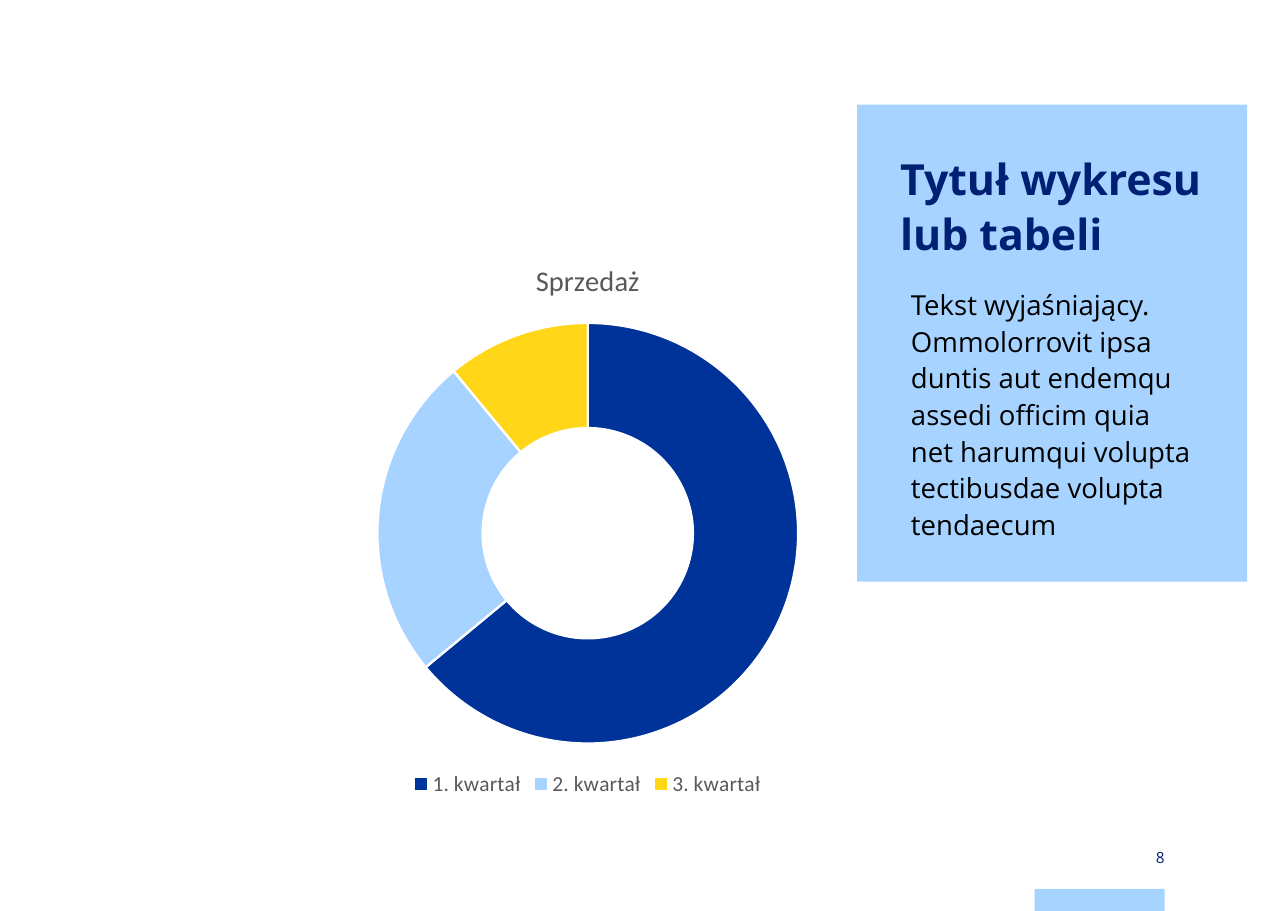
from dataclasses import dataclass

from pptx import Presentation
from pptx.chart.data import CategoryChartData
from pptx.dml.color import RGBColor
from pptx.enum.chart import XL_CHART_TYPE, XL_LEGEND_POSITION
from pptx.enum.shapes import MSO_SHAPE
from pptx.enum.text import MSO_ANCHOR, PP_ALIGN
from pptx.slide import Slide
from pptx.text.text import Font
from pptx.util import Inches, Pt

COLORS = {
    "navy": "002073",
    "blue": "003399",
    "sky": "A6D3FF",
    "yellow": "FFD618",
    "gray": "595959",
    "black": "000000",
    "white": "FFFFFF",
}


@dataclass(frozen=True)
class Box:
    left: float
    top: float
    width: float
    height: float

    def lengths(self) -> list[Inches]:
        return [Inches(v) for v in (self.left, self.top, self.width, self.height)]


@dataclass(frozen=True)
class Label:
    box: Box
    text: str
    size: float
    color: str
    bold: bool = False
    line_spacing: float | None = None
    insets: tuple[float, float] = (0, 0)  # horizontal, vertical
    align: PP_ALIGN = PP_ALIGN.LEFT
    anchor: MSO_ANCHOR = MSO_ANCHOR.TOP


@dataclass(frozen=True)
class Quarter:
    name: str
    share: int
    color: str


PANELS = [
    Box(9.39, 8.07, 1.18, 0.2),  # footer mark
    Box(7.78, 0.95, 3.54, 4.33),  # explanation panel
]
LABELS = [
    Label(Box(8.17, 1.35, 2.76, 1.18), "Tytuł wykresu lub tabeli", 28, "navy",
          bold=True, line_spacing=36),
    Label(Box(8.17, 2.53, 2.76, 2.76),
          "Tekst wyjaśniający. Ommolorrovit ipsa duntis aut endemqu assedi "
          "officim quia net harumqui volupta tectibusdae volupta tendaecum",
          18, "black", line_spacing=24, insets=(0.1, 0.05)),
    Label(Box(9.39, 7.68, 1.18, 0.2), "8", 10, "navy", insets=(0, 0.08),
          align=PP_ALIGN.RIGHT, anchor=MSO_ANCHOR.MIDDLE),
]
SALES_BOX = Box(1.12, 2.16, 8.43, 5.12)
SALES_TITLE = "Sprzedaż"
QUARTERS = [
    Quarter("1. kwartał", 64, "blue"),
    Quarter("2. kwartał", 25, "sky"),
    Quarter("3. kwartał", 11, "yellow"),
]


def rgb(name: str) -> RGBColor:
    return RGBColor.from_string(COLORS[name])


def style_font(font: Font, name: str, size: float, color: str, bold: bool = False) -> None:
    font.name = name
    font.size = Pt(size)
    font.bold = bold
    font.color.rgb = rgb(color)


def draw_panel(slide: Slide, box: Box) -> None:
    panel = slide.shapes.add_shape(MSO_SHAPE.RECTANGLE, *box.lengths())
    panel.shadow.inherit = False
    panel.fill.solid()
    panel.fill.fore_color.rgb = rgb("sky")
    panel.line.fill.background()


def draw_label(slide: Slide, label: Label) -> None:
    frame = slide.shapes.add_textbox(*label.box.lengths()).text_frame
    frame.word_wrap = True
    frame.vertical_anchor = label.anchor
    horizontal, vertical = label.insets
    frame.margin_left = frame.margin_right = Inches(horizontal)
    frame.margin_top = frame.margin_bottom = Inches(vertical)
    paragraph = frame.paragraphs[0]
    paragraph.text = label.text
    paragraph.alignment = label.align
    if label.line_spacing:
        paragraph.line_spacing = Pt(label.line_spacing)
    style_font(paragraph.font, "Open Sans", label.size, label.color, label.bold)


def draw_sales(slide: Slide) -> None:
    sales = CategoryChartData()
    sales.categories = [quarter.name for quarter in QUARTERS]
    sales.add_series(SALES_TITLE, [quarter.share for quarter in QUARTERS])
    chart = slide.shapes.add_chart(
        XL_CHART_TYPE.DOUGHNUT, *SALES_BOX.lengths(), sales).chart
    style_font(chart.font, "Calibri", 10, "black")

    # Title and legend
    chart.has_title = True
    heading = chart.chart_title.text_frame.paragraphs[0]
    heading.text = SALES_TITLE
    style_font(heading.font, "Calibri", 18.6, "gray")
    chart.chart_title.include_in_layout = False
    chart.has_legend = True
    chart.legend.position = XL_LEGEND_POSITION.BOTTOM
    chart.legend.include_in_layout = False
    style_font(chart.legend.font, "Calibri", 14, "gray")

    # Ring segments
    ring = chart.plots[0]
    ring.vary_by_categories = True
    ring.has_data_labels = False
    for index, quarter in enumerate(QUARTERS):
        segment = ring.series[0].points[index].format
        segment.fill.solid()
        segment.fill.fore_color.rgb = rgb(quarter.color)
        segment.line.color.rgb = rgb("white")
        segment.line.width = Pt(1.5)


def main() -> None:
    deck = Presentation()
    deck.slide_width = Inches(11.69)
    deck.slide_height = Inches(8.27)
    slide = deck.slides.add_slide(deck.slide_layouts[6])

    # The chart lies beneath the panels
    draw_sales(slide)
    for panel in PANELS:
        draw_panel(slide, panel)
    for label in LABELS:
        draw_label(slide, label)
    deck.save("out.pptx")


if __name__ == "__main__":
    main()
